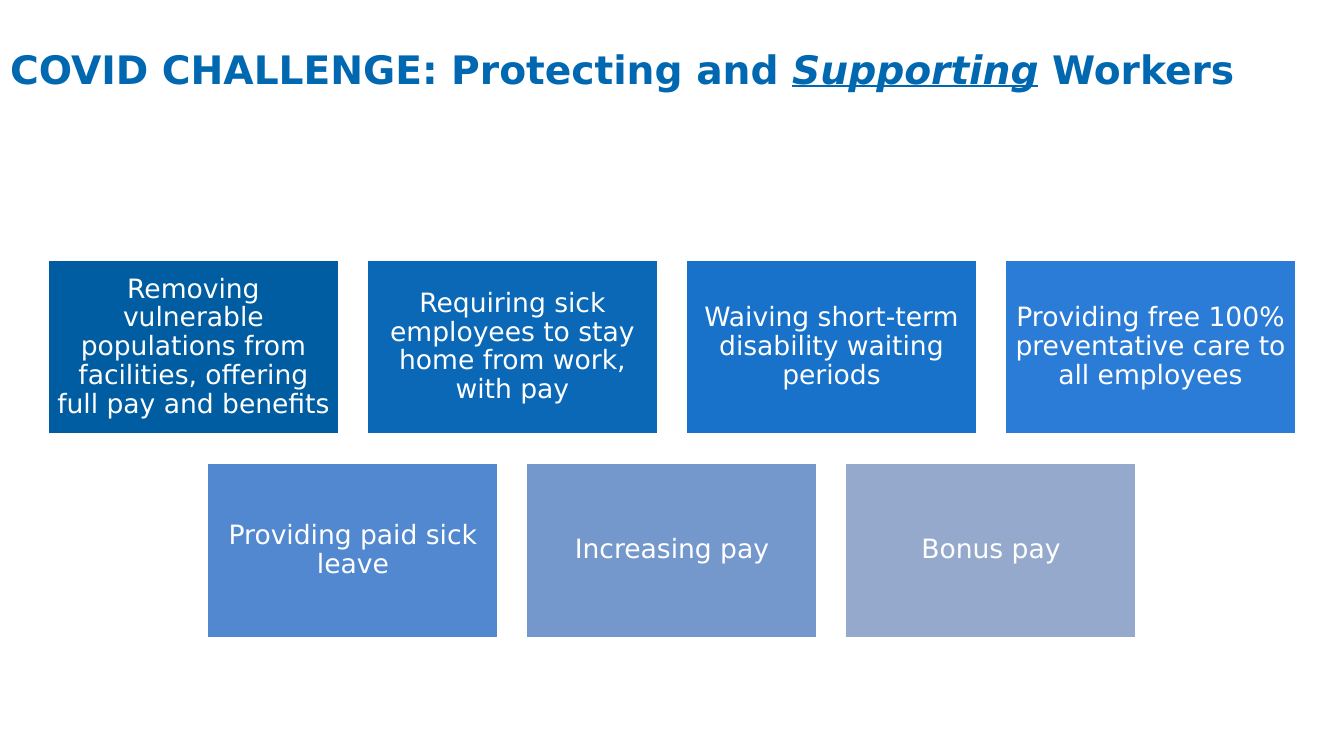
"""Build a slide on how workers were supported during COVID."""
from pptx import Presentation
from pptx.dml.color import RGBColor
from pptx.enum.shapes import MSO_SHAPE
from pptx.enum.text import MSO_ANCHOR, MSO_AUTO_SIZE, PP_ALIGN
from pptx.util import Cm, Pt

FONT_NAME = "DejaVu Sans"
TITLE_BLUE = RGBColor(0x00, 0x67, 0xB1)
WHITE = RGBColor(0xFF, 0xFF, 0xFF)
SLIDE_WIDTH, SLIDE_HEIGHT = 33.87, 19.05
CARD_WIDTH, CARD_HEIGHT = 7.32, 4.39
COLUMN_PITCH, ROW_PITCH = 8.04, 5.12
FIRST_ROW_TOP = 6.55

TITLE_PARTS = [
    ("COVID CHALLENGE: Protecting and ", False),
    ("Supporting", True),
    (" Workers", False),
]
CARD_ROWS = [
    [
        ("Removing vulnerable populations from facilities, offering full pay and benefits",
         RGBColor(0x00, 0x5D, 0xA1)),
        ("Requiring sick employees to stay home from work, with pay",
         RGBColor(0x0A, 0x68, 0xB7)),
        ("Waiving short-term disability waiting periods",
         RGBColor(0x18, 0x72, 0xC9)),
        ("Providing free 100% preventative care to all employees",
         RGBColor(0x2B, 0x7C, 0xD6)),
    ],
    [
        ("Providing paid sick leave", RGBColor(0x52, 0x88, 0xD0)),
        ("Increasing pay", RGBColor(0x75, 0x98, 0xCC)),
        ("Bonus pay", RGBColor(0x95, 0xA9, 0xCD)),
    ],
]


def format_font(font, size, color):
    font.name = FONT_NAME
    font.size = Pt(size)
    font.color.rgb = color


def fill_title(title):
    title.left, title.top = Cm(0), Cm(1.14)
    title.width, title.height = Cm(33.02), Cm(3.18)
    text_frame = title.text_frame
    text_frame.word_wrap = True
    text_frame.auto_size = MSO_AUTO_SIZE.NONE
    text_frame.vertical_anchor = MSO_ANCHOR.TOP
    paragraph = text_frame.paragraphs[0]
    paragraph.alignment = PP_ALIGN.LEFT
    paragraph.line_spacing = 0.9
    for text, emphasized in TITLE_PARTS:
        run = paragraph.add_run()
        run.text = text
        format_font(run.font, 28, TITLE_BLUE)
        run.font.bold = True
        run.font.italic = emphasized
        run.font.underline = emphasized


def add_card(slide, left, top, text, color):
    card = slide.shapes.add_shape(
        MSO_SHAPE.RECTANGLE, Cm(left), Cm(top), Cm(CARD_WIDTH), Cm(CARD_HEIGHT))
    card.shadow.inherit = False
    card.fill.solid()
    card.fill.fore_color.rgb = color
    card.line.color.rgb = WHITE
    card.line.width = Pt(1)
    text_frame = card.text_frame
    text_frame.word_wrap = True
    text_frame.vertical_anchor = MSO_ANCHOR.MIDDLE
    text_frame.margin_left = text_frame.margin_right = Cm(0.2)
    text_frame.margin_top = text_frame.margin_bottom = Cm(0.2)
    text_frame.text = text
    paragraph = text_frame.paragraphs[0]
    paragraph.alignment = PP_ALIGN.CENTER
    paragraph.line_spacing = 0.9
    format_font(paragraph.runs[0].font, 19, WHITE)


def add_card_row(slide, top, cards):
    row_width = (len(cards) - 1) * COLUMN_PITCH + CARD_WIDTH
    row_left = (SLIDE_WIDTH - row_width) / 2
    for column, (text, color) in enumerate(cards):
        add_card(slide, row_left + column * COLUMN_PITCH, top, text, color)


def main():
    presentation = Presentation()
    presentation.slide_width = Cm(SLIDE_WIDTH)
    presentation.slide_height = Cm(SLIDE_HEIGHT)
    slide = presentation.slides.add_slide(presentation.slide_layouts[5])
    fill_title(slide.shapes.title)
    for row, cards in enumerate(CARD_ROWS):
        add_card_row(slide, FIRST_ROW_TOP + row * ROW_PITCH, cards)
    presentation.save("out.pptx")


if __name__ == "__main__":
    main()
